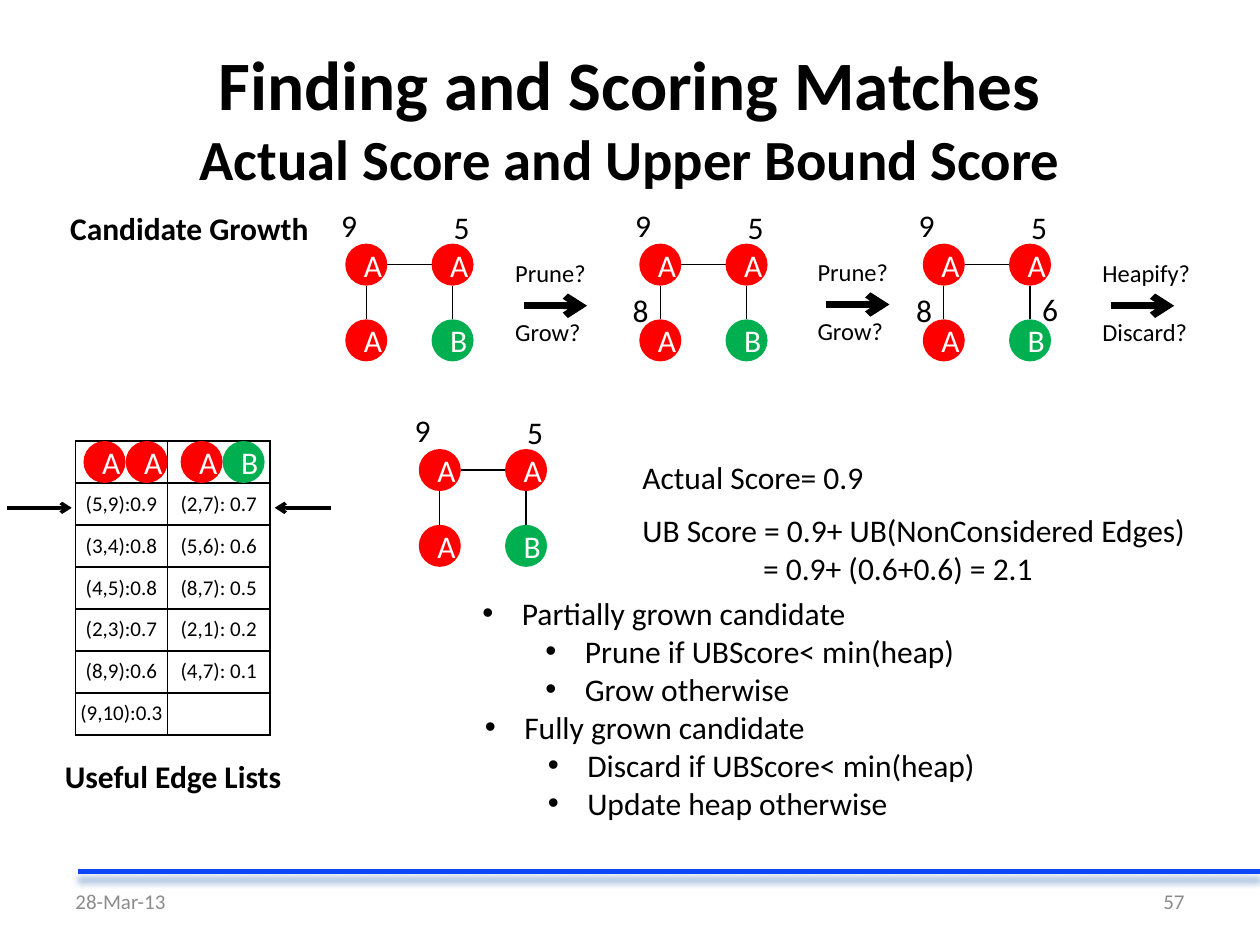
"""Build the slide on actual and upper bound scores of graph matches."""
from dataclasses import dataclass
from typing import Any, Optional

import lxml.etree
import pptx
import pptx.dml.color
import pptx.enum.shapes
import pptx.enum.text
import pptx.oxml.ns
import pptx.util

Pt = pptx.util.Pt
qn = pptx.oxml.ns.qn
Align = pptx.enum.text.PP_ALIGN
Anchor = pptx.enum.text.MSO_ANCHOR


@dataclass(frozen=True)
class Theme:
    font: str = "Calibri"
    black: str = "000000"
    white: str = "FFFFFF"
    grey: str = "8C8C8C"
    red: str = "FF0000"
    green: str = "00B050"
    rule: str = "0C48FA"
    shadow: str = "95B3D7"
    title: float = 39.6
    subtitle: float = 32.4
    body: float = 18
    step: float = 14
    small: float = 12


@dataclass(frozen=True)
class Line:
    text: str
    size: float = Theme.body
    bold: bool = False
    color: str = Theme.black
    align: Optional[Any] = None
    indent: float = 0
    bullet: bool = False
    before: float = 0


@dataclass(frozen=True)
class Graph:
    left: float
    top: float
    scores: str


@dataclass(frozen=True)
class Step:
    left: float
    top: float
    width: float
    question: str
    choice: str


THEME = Theme()
NODE = 24
NODE_GAP_X, NODE_GAP_Y = 49.3, 43.3
SCORE_OFFSETS = {"9": (-9.4, -25.2), "5": (54.8, -23.9), "8": (-10.9, 23.8), "6": (61.2, 23)}
GRAPHS = [
    Graph(197.3, 139.2, "95"),
    Graph(365.3, 139.2, "958"),
    Graph(527.3, 139.2, "9586"),
    Graph(239.3, 256.6, "95"),
]
STEPS = [
    Step(287.3, 144, 55.4, "Prune?", "Grow?"),
    Step(460.1, 143.3, 55.4, "Prune?", "Grow?"),
    Step(622.8, 144, 65.5, "Heapify?", "Discard?"),
]
EDGE_ROWS = [
    ("", ""),
    ("(5,9):0.9", "(2,7): 0.7"),
    ("(3,4):0.8", "(5,6): 0.6"),
    ("(4,5):0.8", "(8,7): 0.5"),
    ("(2,3):0.7", "(2,1): 0.2"),
    ("(8,9):0.6", "(4,7): 0.1"),
    ("(9,10):0.3", ""),
]
EDGE_COLUMNS = (52.4, 58.8)
HEADER_NODES = [("A", 47.7), ("A", 71.8), ("A", 103.2), ("B", 127.2)]


def rgb(color: str) -> Any:
    """Turn a hex string into a colour."""
    return pptx.dml.color.RGBColor.from_string(color)


def add_run(para: Any, line: Line) -> None:
    """Append one styled run."""
    span = para.add_run()
    span.text = line.text
    span.font.name = THEME.font
    span.font.size = Pt(line.size)
    span.font.bold = line.bold
    span.font.color.rgb = rgb(line.color)


def add_para(frame: Any, line: Line, first: bool) -> Any:
    """Write a line as the first or the next paragraph."""
    para = frame.paragraphs[0] if first else frame.add_paragraph()
    if line.align is not None:
        para.alignment = line.align
    if line.before:
        para.space_before = Pt(line.before)
    if line.indent:
        properties = para._p.get_or_add_pPr()
        properties.set("marL", str(Pt(line.indent)))
        if line.bullet:
            properties.set("indent", str(-Pt(22.5)))
            lxml.etree.SubElement(properties, qn("a:buFont"), typeface="Arial")
            lxml.etree.SubElement(properties, qn("a:buChar"), char="•")
            para.level = 1 if line.indent > 30 else 0
    add_run(para, line)
    return para


def add_text(page: Any, left: float, top: float, width: float, height: float,
             *lines: Line, fixed: bool = False) -> Any:
    """Add a text box, either fixed and centred vertically or fitted to its text."""
    box = page.shapes.add_textbox(Pt(left), Pt(top), Pt(width), Pt(height))
    frame = box.text_frame
    frame.word_wrap = fixed
    sizing = pptx.enum.text.MSO_AUTO_SIZE
    frame.auto_size = sizing.NONE if fixed else sizing.SHAPE_TO_FIT_TEXT
    frame.vertical_anchor = Anchor.MIDDLE if fixed else Anchor.TOP
    for index, line in enumerate(lines):
        add_para(frame, line, index == 0)
    return frame


def add_line(page: Any, start: tuple[float, float], end: tuple[float, float],
             width: float = 0.75, color: str = THEME.black, arrow: bool = False) -> Any:
    """Draw a straight line and return its effect list."""
    line = page.shapes.add_connector(
        pptx.enum.shapes.MSO_CONNECTOR.STRAIGHT, *map(Pt, (*start, *end)))
    line.line.width = Pt(width)
    line.line.color.rgb = rgb(color)
    if arrow:
        lxml.etree.SubElement(line.line._get_or_add_ln(), qn("a:tailEnd"), type="arrow")
    return lxml.etree.SubElement(line._element.spPr, qn("a:effectLst"))


def add_node(page: Any, label: str, left: float, top: float) -> None:
    """Draw a labelled graph node."""
    node = page.shapes.add_shape(
        pptx.enum.shapes.MSO_SHAPE.OVAL, Pt(left), Pt(top), Pt(NODE), Pt(NODE))
    node.shadow.inherit = False
    node.fill.solid()
    node.fill.fore_color.rgb = rgb(THEME.green if label == "B" else THEME.red)
    node.line.fill.background()
    node.text_frame.vertical_anchor = Anchor.MIDDLE
    add_para(node.text_frame, Line(label, color=THEME.white, align=Align.CENTER), True)


def add_graph(page: Any, graph: Graph) -> None:
    """Draw a four-node candidate with the scores of its edges."""
    right, bottom = graph.left + NODE_GAP_X, graph.top + NODE_GAP_Y
    half = NODE / 2
    add_line(page, (graph.left + NODE, graph.top + half), (right, graph.top + half))
    for left, lower in ((graph.left, "A"), (right, "B")):
        add_line(page, (left + half, graph.top + NODE), (left + half, bottom))
        add_node(page, "A", left, graph.top)
        add_node(page, lower, left, bottom)
    for score in graph.scores:
        shift_x, shift_y = SCORE_OFFSETS[score]
        add_text(page, graph.left + shift_x, graph.top + shift_y, 23.7, 29, Line(score))


def add_step(page: Any, step: Step) -> None:
    """Draw a growth arrow between its two choices."""
    add_text(page, step.left, step.top, step.width, 58.2, Line(step.question, THEME.step),
             Line(step.choice, THEME.step, before=17))
    start, middle = step.left + 12.2, step.top + 30.7
    add_line(page, (start, middle), (start + 36, middle), 4, arrow=True)


def add_edge_table(page: Any) -> None:
    """Draw the table of useful edges with nodes in its header."""
    table = page.shapes.add_table(
        len(EDGE_ROWS), 2, Pt(43.2), Pt(252), Pt(sum(EDGE_COLUMNS)), Pt(168)).table
    table.first_row = table.horz_banding = False
    for column, width in zip(table.columns, EDGE_COLUMNS):
        column.width = Pt(width)
    for row, texts in enumerate(EDGE_ROWS):
        table.rows[row].height = Pt(NODE)
        for column, text in enumerate(texts):
            cell = table.cell(row, column)
            cell.margin_left = cell.margin_right = cell.margin_top = cell.margin_bottom = 0
            cell.vertical_anchor = Anchor.MIDDLE
            properties = cell._tc.get_or_add_tcPr()
            for side in ("lnL", "lnR", "lnT", "lnB"):
                border = lxml.etree.SubElement(properties, qn(f"a:{side}"), w=str(Pt(1)))
                fill = lxml.etree.SubElement(border, qn("a:solidFill"))
                lxml.etree.SubElement(fill, qn("a:srgbClr"), val=THEME.black)
            cell.fill.background()
            if text:
                add_para(cell.text_frame, Line(text, THEME.small, align=Align.CENTER), True)
    for label, left in HEADER_NODES:
        add_node(page, label, left, 252)
    for start, end in ((4.3, 41), (189.4, 157)):
        add_line(page, (start, 290.2), (end, 290.2), 2, arrow=True)


def add_frame(page: Any) -> None:
    """Draw the title, the footer and the shadowed rule."""
    effects = add_line(page, (44.6, 498.2), (720, 498.2), 3, THEME.rule)
    shadow = lxml.etree.SubElement(effects, qn("a:outerShdw"), blurRad=str(Pt(4)),
                                   dist=str(Pt(4)), dir="5400000", rotWithShape="0")
    lxml.etree.SubElement(shadow, qn("a:srgbClr"), val=THEME.shadow)
    title = add_text(page, 36, 21.6, 648, 90, Line(
        "Finding and Scoring Matches", THEME.title, True, align=Align.CENTER), fixed=True)
    title.paragraphs[0].add_line_break()
    add_run(title.paragraphs[0], Line("Actual Score and Upper Bound Score", THEME.subtitle, True))
    for left, text, align in ((36, "28-Mar-13", Align.LEFT), (516, "57", Align.RIGHT)):
        add_text(page, left, 500.4, 168, 28.8,
                 Line(text, THEME.small, color=THEME.grey, align=align), fixed=True)


def add_rules(page: Any, left: float, top: float, width: float, *texts: str) -> None:
    """Add a bulleted heading with its indented cases."""
    add_text(page, left, top, width, 72.7, *(
        Line(text, indent=58.5 if index else 22.5, bullet=True)
        for index, text in enumerate(texts)))


def main() -> None:
    """Build and save the deck."""
    deck = pptx.Presentation()
    deck.slide_width, deck.slide_height = Pt(720), Pt(540)
    page = deck.slides.add_slide(deck.slide_layouts[6])
    add_frame(page)
    add_text(page, 33, 116, 152, 29, Line("Candidate Growth", bold=True))
    add_text(page, 30, 429, 139, 29, Line("Useful Edge Lists", bold=True))
    add_text(page, 360, 258, 142.6, 29, Line("Actual Score= 0.9"))
    add_text(page, 360, 288.7, 328.3, 51, Line("UB Score = 0.9+ UB(NonConsidered Edges)"),
             Line("= 0.9+ (0.6+0.6) = 2.1", indent=69))
    add_rules(page, 268.6, 336, 287.3, "Partially grown candidate",
              "Prune if UBScore< min(heap)", "Grow otherwise")
    add_rules(page, 270, 401, 298, "Fully grown candidate",
              "Discard if UBScore< min(heap)", "Update heap otherwise")
    for graph in GRAPHS:
        add_graph(page, graph)
    for step in STEPS:
        add_step(page, step)
    add_edge_table(page)
    deck.save("out.pptx")


if __name__ == "__main__":
    main()
